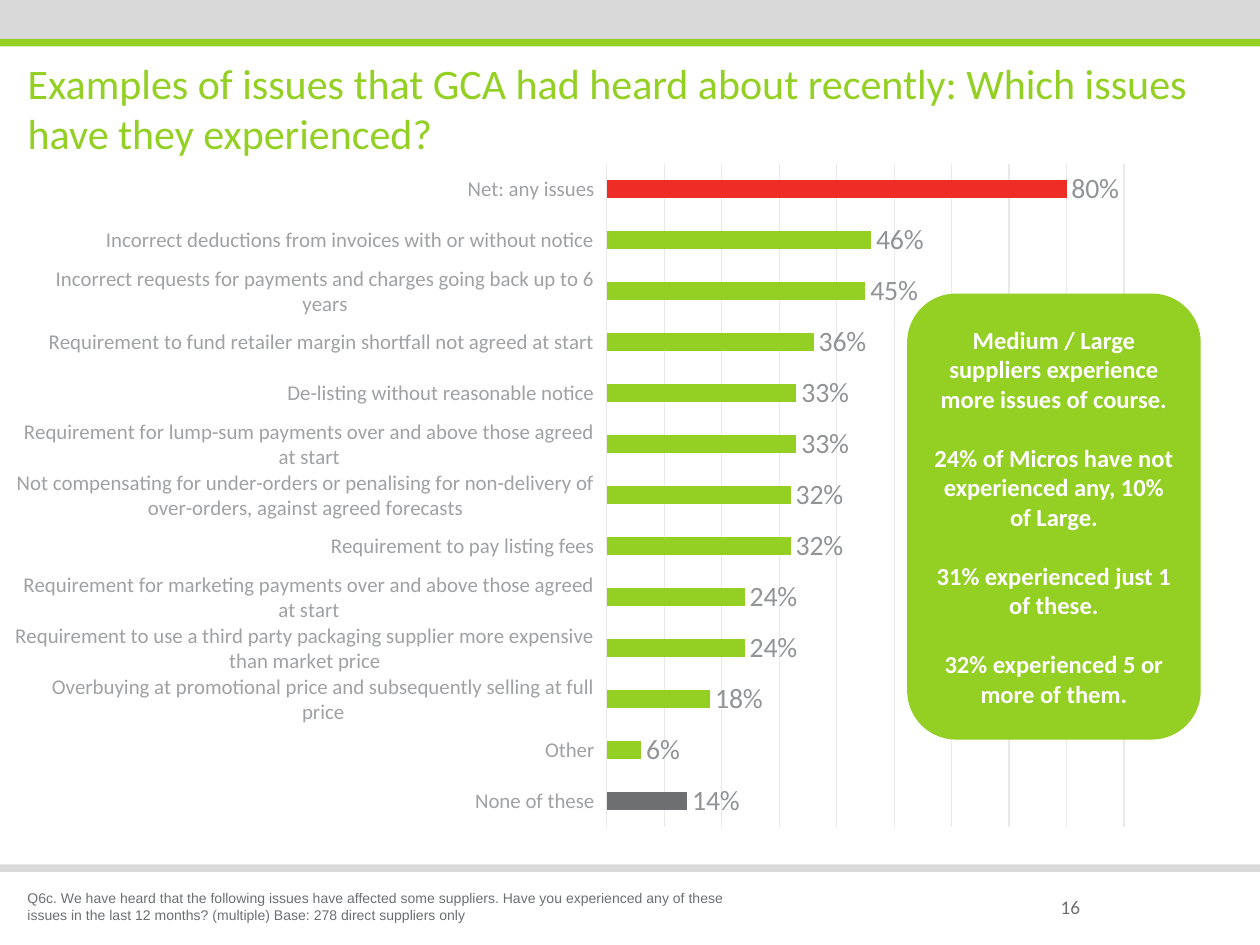
from lxml.etree import SubElement
from pptx import Presentation
from pptx.chart.data import CategoryChartData
from pptx.dml.color import RGBColor
from pptx.enum.chart import XL_CHART_TYPE, XL_LABEL_POSITION, XL_TICK_LABEL_POSITION, XL_TICK_MARK
from pptx.enum.shapes import MSO_SHAPE
from pptx.enum.text import MSO_ANCHOR, PP_ALIGN
from pptx.oxml import parse_xml
from pptx.oxml.ns import nsdecls, qn
from pptx.util import Inches, Pt

COLOURS = {
    "green": "93D023",
    "red": "EE2D27",
    "dark": "6D6F71",
    "label": "A0A1A3",
    "value": "919395",
    "grid": "E9E9EA",
    "band": "D9D9D9",
    "white": "FFFFFF",
}

ISSUES = [
    ("Net: any issues", 0.80),
    ("Incorrect deductions from invoices with or without notice", 0.46),
    ("Incorrect requests for payments and charges going back up to 6 years", 0.45),
    ("Requirement to fund retailer margin shortfall not agreed at start", 0.36),
    ("De-listing without reasonable notice", 0.33),
    ("Requirement for lump-sum payments over and above those agreed at start", 0.33),
    ("Not compensating for under-orders or penalising for non-delivery of over-orders, "
     "against agreed forecasts", 0.32),
    ("Requirement to pay listing fees", 0.32),
    ("Requirement for marketing payments over and above those agreed at start", 0.24),
    ("Requirement to use a third party packaging supplier more expensive than market price", 0.24),
    ("Overbuying at promotional price and subsequently selling at full price", 0.18),
    ("Other", 0.06),
    ("None of these", 0.14),
]

FINDINGS = [
    "Medium / Large suppliers experience more issues of course.",
    "24% of Micros have not experienced any, 10% of Large.",
    "31% experienced just 1 of these.",
    "32% experienced 5 or more of them.",
]


def colour(name):
    return RGBColor.from_string(COLOURS[name])


def format_font(font, size, color, name="Calibri", bold=False):
    font.size = Pt(size)
    font.name = name
    font.bold = bold
    font.color.rgb = colour(color)


def write_text(frame, *texts, size, color="dark", font="Calibri", bold=False,
               align=PP_ALIGN.LEFT, anchor=MSO_ANCHOR.TOP, gap=0):
    frame.word_wrap = True
    frame.vertical_anchor = anchor
    for index, text in enumerate(texts):
        paragraph = frame.add_paragraph() if index else frame.paragraphs[0]
        paragraph.alignment = align
        if index:
            paragraph.space_before = Pt(gap)
        run = paragraph.add_run()
        run.text = text
        format_font(run.font, size, color, font, bold)


class SlideBuilder:
    def __init__(self, presentation):
        self.slide = presentation.slides.add_slide(presentation.slide_layouts[5])

    def title(self, text, left, top, width, height, **style):
        shape = self.slide.shapes.title
        shape.left, shape.top = Inches(left), Inches(top)
        shape.width, shape.height = Inches(width), Inches(height)
        write_text(shape.text_frame, text, **style)

    def text(self, text, left, top, width, height, **style):
        shape = self.slide.shapes.add_textbox(
            Inches(left), Inches(top), Inches(width), Inches(height))
        write_text(shape.text_frame, text, **style)

    def block(self, left, top, width, height, fill, kind=MSO_SHAPE.RECTANGLE):
        shape = self.slide.shapes.add_shape(
            kind, Inches(left), Inches(top), Inches(width), Inches(height))
        shape.shadow.inherit = False
        shape.fill.solid()
        shape.fill.fore_color.rgb = colour(fill)
        shape.line.fill.background()
        return shape

    def bar_chart(self, rows, left, top, width, height, accents, plot_layout):
        data = CategoryChartData(number_format="0%")
        data.categories = [name for name, _ in rows]
        data.add_series("Series 1", [value for _, value in rows])
        chart = self.slide.shapes.add_chart(
            XL_CHART_TYPE.BAR_CLUSTERED, Inches(left), Inches(top),
            Inches(width), Inches(height), data).chart
        chart.has_legend = False
        chart.has_title = False
        format_font(chart.font, 10, "dark")
        self.style_axes(chart)
        self.style_bars(chart.plots[0], accents)
        self.place_plot(chart, plot_layout)

    def style_axes(self, chart):
        categories = chart.category_axis
        categories.reverse_order = True
        categories.major_tick_mark = XL_TICK_MARK.NONE
        categories.tick_label_position = XL_TICK_LABEL_POSITION.LOW
        categories.format.line.color.rgb = colour("grid")
        categories.format.line.width = Pt(0.75)
        format_font(categories.tick_labels.font, 12, "label")
        values = chart.value_axis
        values.visible = False
        values.minimum_scale, values.maximum_scale, values.major_unit = 0, 0.9, 0.1
        values.has_major_gridlines = True
        values.major_gridlines.format.line.color.rgb = colour("grid")
        values.major_gridlines.format.line.width = Pt(0.75)

    def style_bars(self, plot, accents):
        plot.gap_width = 182
        plot.vary_by_categories = False
        series = plot.series[0]
        series.format.fill.solid()
        series.format.fill.fore_color.rgb = colour("green")
        for index, name in accents.items():
            fill = series.points[index].format.fill
            fill.solid()
            fill.fore_color.rgb = colour(name)
        labels = series.data_labels
        labels.show_value = True
        labels.position = XL_LABEL_POSITION.OUTSIDE_END
        labels.number_format = "0%"
        labels.number_format_is_linked = False
        format_font(labels.font, 16, "value")

    def place_plot(self, chart, plot_layout):
        plot_area = chart.plots[0]._element.getparent()
        for previous in plot_area.findall(qn("c:layout")):
            plot_area.remove(previous)
        layout = parse_xml(f"<c:layout {nsdecls('c')}><c:manualLayout/></c:layout>")
        settings = [("layoutTarget", "inner"), ("xMode", "edge"), ("yMode", "edge")]
        settings += zip("xywh", plot_layout)
        for tag, value in settings:
            SubElement(layout[0], qn(f"c:{tag}")).set("val", str(value))
        plot_area.insert(0, layout)


def main():
    presentation = Presentation()
    presentation.slide_width, presentation.slide_height = Inches(10), Inches(7.5)
    builder = SlideBuilder(presentation)
    builder.block(0, 0, 10, 0.31, "band")
    builder.block(0, 6.86, 10, 0.06, "band")
    builder.block(0, 0.31, 10, 0.06, "green")
    builder.title(
        "Examples of issues that GCA had heard about recently: "
        "Which issues have they experienced?",
        0.12, 0.6, 9.69, 0.51, size=24, color="green", anchor=MSO_ANCHOR.MIDDLE)
    builder.text("16", 8.32, 6.94, 0.77, 0.52, size=11, anchor=MSO_ANCHOR.MIDDLE)
    builder.bar_chart(ISSUES, 0.12, 1.07, 9.37, 5.51,
                      accents={0: "red", len(ISSUES) - 1: "dark"},
                      plot_layout=(0.498, 0.042, 0.441, 0.955))
    builder.text(
        "Q6c. We have heard that the following issues have affected some suppliers. "
        "Have you experienced any of these issues in the last 12 months? (multiple) "
        "Base: 278 direct suppliers only",
        0.12, 7.01, 6.06, 0.37, size=8, font="Arial")
    callout = builder.block(7.2, 2.33, 2.33, 3.54, "green", MSO_SHAPE.ROUNDED_RECTANGLE)
    write_text(callout.text_frame, *FINDINGS, size=14, color="white", bold=True,
               align=PP_ALIGN.CENTER, anchor=MSO_ANCHOR.MIDDLE, gap=17)
    presentation.save("out.pptx")


if __name__ == "__main__":
    main()
